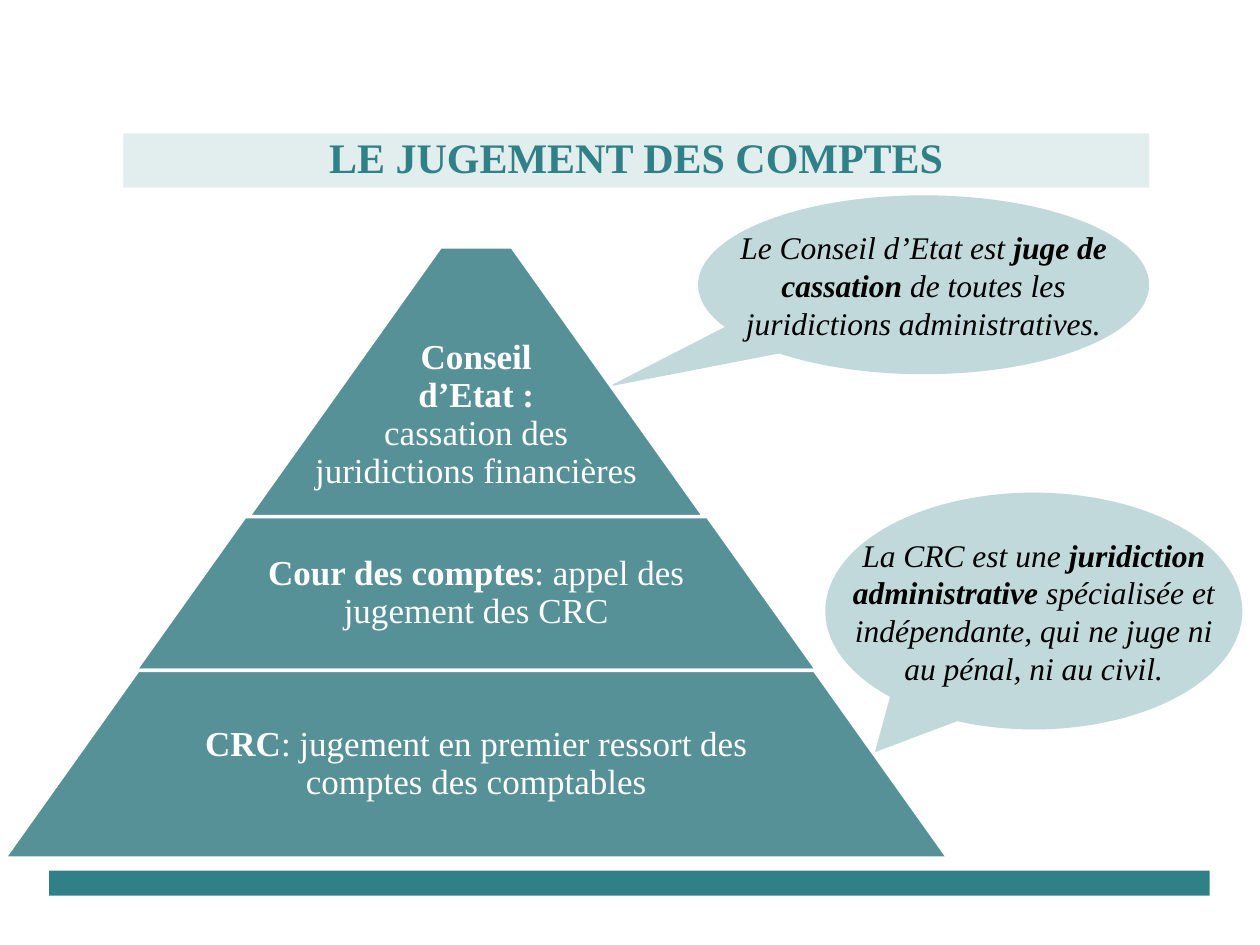
from collections import namedtuple
from pptx import Presentation
from pptx.dml.color import RGBColor as Rgb
from pptx.enum.shapes import MSO_SHAPE as Shape
from pptx.enum.text import MSO_ANCHOR as Anchor, PP_ALIGN as Align
from pptx.oxml.xmlchemy import OxmlElement as Element
from pptx.util import Inches, Pt

COLORS = {
    "bar": "308087",
    "band": "E2EDEE",
    "tier": "579198",
    "bubble": "A7C9CC",
    "white": "FFFFFF",
    "black": "000000",
}
FONT = "Times New Roman"
COLUMNS, ROWS = 100, 75

deck = Presentation()
deck.slide_width, deck.slide_height = Inches(10), Inches(7.5)
COLUMN = deck.slide_width / COLUMNS
ROW = deck.slide_height / ROWS

Box = namedtuple("Box", "left top width height")
Style = namedtuple("Style", "size color italic spacing")

TITLE = Style(24, "bar", False, 0.85)
TIER = Style(20, "white", False, 0.9)
REMARK = Style(18, "black", True, 1)


def place(box):
    return (round(box.left * COLUMN), round(box.top * ROW),
            round(box.width * COLUMN), round(box.height * ROW))


def narrow(box, share):
    return box._replace(left=box.left + box.width * (1 - share) / 2,
                        width=box.width * share)


def add_filled(page, kind, box, color, adjustments=()):
    shape = page.shapes.add_shape(kind, *place(box))
    shape.shadow.inherit = False
    shape.fill.solid()
    shape.fill.fore_color.rgb = Rgb.from_string(COLORS[color])
    shape.line.fill.background()
    for index, value in enumerate(adjustments):
        shape.adjustments[index] = value
    return shape


def write(frame, paragraphs, style, margin, extra_top=0):
    frame.word_wrap = True
    frame.vertical_anchor = Anchor.MIDDLE
    frame.margin_left = frame.margin_right = frame.margin_bottom = Inches(margin)
    frame.margin_top = Inches(margin + extra_top)
    for index, spans in enumerate(paragraphs):
        para = frame.add_paragraph() if index else frame.paragraphs[0]
        para.alignment = Align.CENTER
        para.line_spacing = style.spacing
        for text, bold in spans:
            span = para.add_run()
            span.text = text
            font = span.font
            font.name, font.size = FONT, Pt(style.size)
            font.bold, font.italic = bold, style.italic
            font.color.rgb = Rgb.from_string(COLORS[style.color])


def add_title(page, box, text):
    band = add_filled(page, Shape.RECTANGLE, box, "band")
    write(band.text_frame, [[(text, True)]], TITLE, 0)


def add_bubble(page, box, tail, spans):
    bubble = add_filled(page, Shape.OVAL_CALLOUT, box, "bubble", tail)
    alpha = Element("a:alpha")
    alpha.set("val", "70000")
    bubble.fill._xPr.find(".//{*}srgbClr").append(alpha)
    label = page.shapes.add_textbox(*place(narrow(box, 0.93)))
    write(label.text_frame, [spans], REMARK, 0.1)


def add_tier(page, box, share, paragraphs, extra_top=0):
    tier = add_filled(page, Shape.TRAPEZOID, box, "tier", [0.712])
    tier.line.color.rgb = Rgb.from_string(COLORS["white"])
    tier.line.width = Pt(2)
    label = page.shapes.add_textbox(*place(narrow(box, share)))
    write(label.text_frame, paragraphs, TIER, 0.02, extra_top)


def add_pyramid(page, center, tiers):
    for top, width, height, share, paragraphs, extra_top in tiers:
        box = Box(center - width / 2, top, width, height)
        add_tier(page, box, share, paragraphs, extra_top)


def build_page():
    page = deck.slides.add_slide(deck.slide_layouts[6])
    add_filled(page, Shape.RECTANGLE, Box(3.9, 69.1, 92.1, 2), "bar")
    add_bubble(page, Box(65.5, 39.1, 33.1, 18.8), (-0.381, 0.596), [
        ("La CRC est une ", False),
        ("juridiction administrative ", True),
        ("spécialisée et indépendante, qui ne juge ni au pénal, ni au civil.", False),
    ])
    add_bubble(page, Box(55.4, 15.5, 35.8, 14.2), (-0.698, 0.569), [
        ("Le Conseil d’Etat est ", False),
        ("juge de cassation ", True),
        ("de toutes les juridictions administratives.", False),
    ])
    add_title(page, Box(9.8, 10.6, 81.4, 4.3), "LE JUGEMENT DES COMPTES")
    add_pyramid(page, 37.8, [
        (19.6, 42, 25.5, 1, [
            [("Conseil", True)],
            [("d’Etat :", True)],
            [("cassation des", False)],
            [("juridictions financières", False)],
        ], 0.12),
        (41, 54.1, 12.2, 0.65, [
            [("Cour des comptes", True), (": appel des jugement des CRC", False)],
        ], 0),
        (53.2, 74.9, 14.9, 0.65, [
            [("CRC", True),
             (": jugement en premier ressort des comptes des comptables", False)],
        ], 0),
    ])


build_page()
deck.save("out.pptx")
